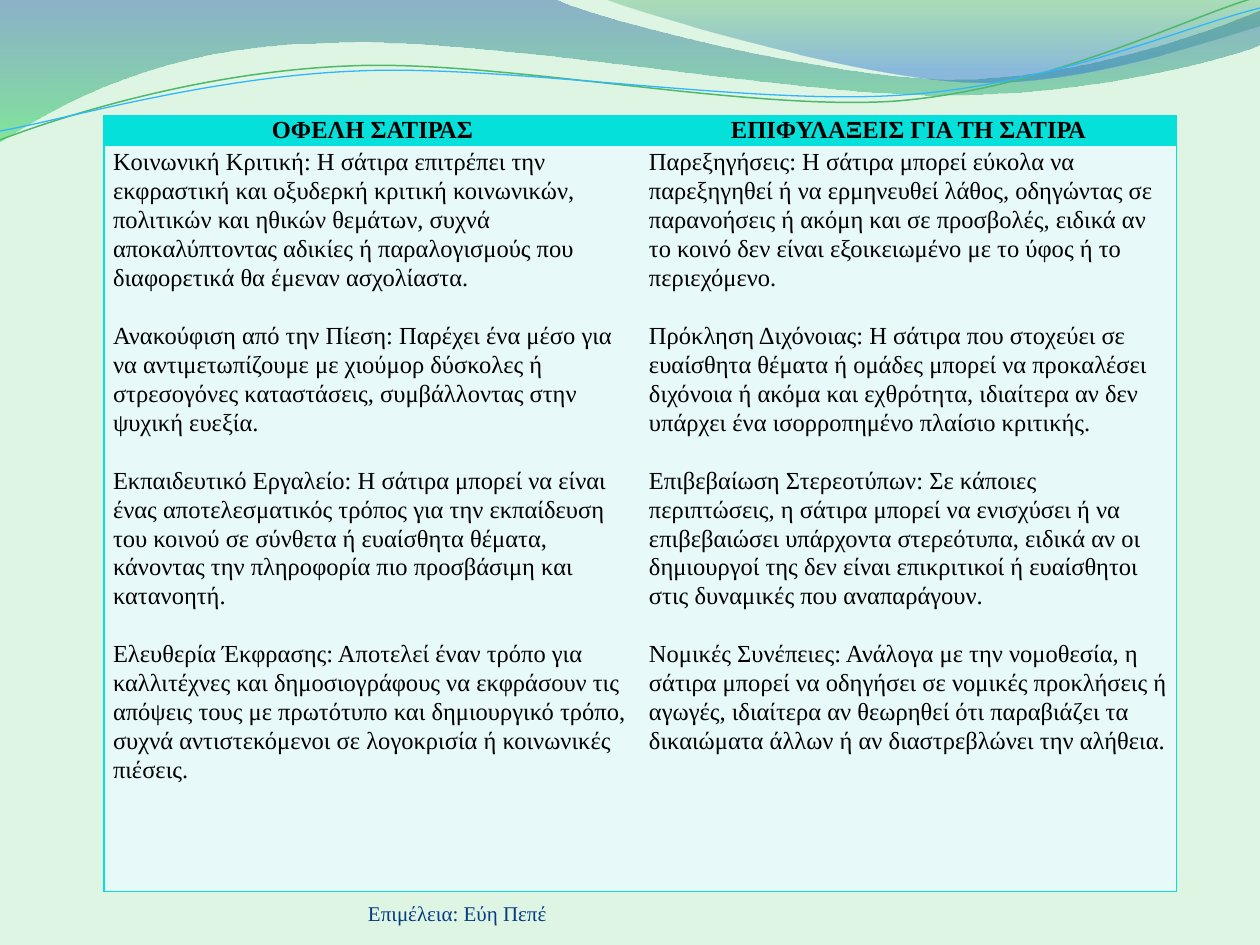
import math
import pptx
import pptx.dml.color
import pptx.enum.text
import pptx.oxml.ns
import pptx.util
import lxml.etree

PX = 914400 / 126
THEME = {
    "background": "DEF5E4", "accent": "05E0DB", "body": "E7F9F8",
    "text": "000000", "credit": "073B81", "font": "Times New Roman",
    "table_size": 14, "credit_size": 12, "line_spacing": 1.07, "paragraph_gap": 16.6,
    "back_wave": [(0, "2960A7", 45), (1, "35DA5E", 55)],
    "front_wave": [(0, "36A752", 30), (0.8, "2472D3", 45)],
    "green_line": ("50B86A", 0.85), "blue_line": ("31B6FD", 0.75),
}
rgb = pptx.dml.color.RGBColor.from_string
qn = pptx.oxml.ns.qn


def px(length):
    return pptx.util.Emu(round(length * PX))


def add_run(paragraph, wording, size, color, bold=False):
    run = paragraph.add_run()
    run.text = wording
    run.font.name = THEME["font"]
    run.font.size = pptx.util.Pt(size)
    run.font.bold = bold
    run.font.color.rgb = rgb(color)


deck = pptx.Presentation()
deck.slide_width, deck.slide_height = px(1260), px(945)
slide = deck.slides.add_slide(deck.slide_layouts[6])
slide.background.fill.solid()
slide.background.fill.fore_color.rgb = rgb(THEME["background"])

waves = [
    ("back_wave", 0, (0, 0), [
        (554, -1), (600, 21, 837, 79, 955, 79), (1075, 79, 1207, 33, 1260, 11),
        (1261, 45), (1239, 55, 1096, 96, 940, 95), (784, 95, 481, 35, 324, 43),
        (163, 45, 58, 105, -1, 142)]),
    ("front_wave", 0, (604, -1), [
        (641, 14, 859, 78, 969, 82), (1079, 87, 1211, 40, 1260, 26), (1260, 0)]),
    ("green_line", -2.7, (0, 140), [
        (60, 117, 199, 72, 349, 66), (498, 59, 747, 112, 898, 101),
        (1050, 88, 1182, 19, 1257, -3)]),
    ("blue_line", -2.7, (0, 131), [
        (59, 121, 207, 77, 357, 71), (506, 64, 752, 106, 903, 95),
        (1053, 85, 1186, 26, 1260, 8)]),
]
PIVOT_X, PIVOT_Y = 629, 73
for style, tilt, start, segments in waves:
    cosine, sine = math.cos(math.radians(-tilt)), math.sin(math.radians(-tilt))
    points = []
    for segment in [start] + segments:
        for x, y in zip(segment[::2], segment[1::2]):
            dx, dy = x - PIVOT_X, y - PIVOT_Y
            points.append((px(PIVOT_X + dx * cosine - dy * sine),
                           px(PIVOT_Y + dx * sine + dy * cosine)))
    filled = style.endswith("wave")
    builder = slide.shapes.build_freeform(*points[0], scale=1.0)
    builder.add_line_segments(points[1:], close=filled)
    wave = builder.convert_to_shape()
    wave.rotation = tilt
    wave.shadow.inherit = False

    steps = iter(list(wave._element.spPr.iter(qn("a:lnTo"))))
    for segment in segments:
        step = next(steps)
        if len(segment) == 6:
            curve = lxml.etree.Element(qn("a:cubicBezTo"))
            step.addprevious(curve)
            for handle in (step, next(steps), next(steps)):
                curve.append(handle[0])
                handle.getparent().remove(handle)

    if filled:
        wave.line.fill.background()
        wave.fill.gradient()
        wave.fill.gradient_angle = 270
        for stop, (position, color, opacity) in zip(wave.fill.gradient_stops, THEME[style]):
            stop.position = position
            stop.color.rgb = rgb(color)
        tints = wave._element.spPr.iter(qn("a:srgbClr"))
        for tint, (position, color, opacity) in zip(tints, THEME[style]):
            lxml.etree.SubElement(tint, qn("a:alpha")).set("val", str(opacity * 1000))
    else:
        color, width = THEME[style]
        wave.fill.background()
        wave.line.color.rgb = rgb(color)
        wave.line.width = pptx.util.Pt(width)

credit = slide.shapes.add_textbox(px(368), px(876), px(462), px(50)).text_frame
credit.word_wrap = True
credit.vertical_anchor = pptx.enum.text.MSO_ANCHOR.BOTTOM
credit.margin_left = credit.margin_right = credit.margin_top = credit.margin_bottom = 0
add_run(credit.paragraphs[0], "Επιμέλεια: Εύη Πεπέ", THEME["credit_size"], THEME["credit"])

benefits = [
    "Κοινωνική Κριτική: Η σάτιρα επιτρέπει την εκφραστική και οξυδερκή κριτική κοινωνικών, πολιτικών και ηθικών θεμάτων, συχνά αποκαλύπτοντας αδικίες ή παραλογισμούς που διαφορετικά θα έμεναν ασχολίαστα.",
    "Ανακούφιση από την Πίεση: Παρέχει ένα μέσο για να αντιμετωπίζουμε με χιούμορ δύσκολες ή στρεσογόνες καταστάσεις, συμβάλλοντας στην ψυχική ευεξία.",
    "Εκπαιδευτικό Εργαλείο: Η σάτιρα μπορεί να είναι ένας αποτελεσματικός τρόπος για την εκπαίδευση του κοινού σε σύνθετα ή ευαίσθητα θέματα, κάνοντας την πληροφορία πιο προσβάσιμη και κατανοητή.",
    "Ελευθερία Έκφρασης: Αποτελεί έναν τρόπο για καλλιτέχνες και δημοσιογράφους να εκφράσουν τις απόψεις τους με πρωτότυπο και δημιουργικό τρόπο, συχνά αντιστεκόμενοι σε λογοκρισία ή κοινωνικές πιέσεις.",
]
reservations = [
    "Παρεξηγήσεις: Η σάτιρα μπορεί εύκολα να παρεξηγηθεί ή να ερμηνευθεί λάθος, οδηγώντας σε παρανοήσεις ή ακόμη και σε προσβολές, ειδικά αν το κοινό δεν είναι εξοικειωμένο με το ύφος ή το περιεχόμενο.",
    "Πρόκληση Διχόνοιας: Η σάτιρα που στοχεύει σε ευαίσθητα θέματα ή ομάδες μπορεί να προκαλέσει διχόνοια ή ακόμα και εχθρότητα, ιδιαίτερα αν δεν υπάρχει ένα ισορροπημένο πλαίσιο κριτικής.",
    "Επιβεβαίωση Στερεοτύπων: Σε κάποιες περιπτώσεις, η σάτιρα μπορεί να ενισχύσει ή να επιβεβαιώσει υπάρχοντα στερεότυπα, ειδικά αν οι δημιουργοί της δεν είναι επικριτικοί ή ευαίσθητοι στις δυναμικές που αναπαράγουν.",
    "Νομικές Συνέπειες: Ανάλογα με την νομοθεσία, η σάτιρα μπορεί να οδηγήσει σε νομικές προκλήσεις ή αγωγές, ιδιαίτερα αν θεωρηθεί ότι παραβιάζει τα δικαιώματα άλλων ή αν διαστρεβλώνει την αλήθεια.",
]
satire_rows = [
    [["ΟΦΕΛΗ ΣΑΤΙΡΑΣ"], ["ΕΠΙΦΥΛΑΞΕΙΣ ΓΙΑ ΤΗ ΣΑΤΙΡΑ"]],
    [benefits, reservations],
]
satire = slide.shapes.add_table(2, 2, px(104), px(115), px(1072), px(774)).table
satire.first_row = satire.horz_banding = False
satire._tbl.tblPr.find(qn("a:tableStyleId")).text = "{2D5ABB26-0587-4C30-8999-92F81FD0307C}"
for column in satire.columns:
    column.width = px(536)
for row, height in zip(satire.rows, (29, 745)):
    row.height = px(height)

for r, row in enumerate(satire_rows):
    header = r == 0
    for c, paragraphs in enumerate(row):
        cell = satire.cell(r, c)
        cell.margin_left, cell.margin_right = px(9), px(8)
        cell.margin_top = cell.margin_bottom = 0
        properties = cell._tc.get_or_add_tcPr()
        borders = [("lnL", 1) if c == 0 else ("lnR", 0.25)]
        if not header:
            borders.append(("lnB", 1))
        for side, width in borders:
            border = lxml.etree.SubElement(properties, qn("a:" + side))
            border.set("w", str(pptx.util.Pt(width)))
            ink = lxml.etree.SubElement(border, qn("a:solidFill"))
            lxml.etree.SubElement(ink, qn("a:srgbClr"), val=THEME["accent"])
        cell.fill.solid()
        cell.fill.fore_color.rgb = rgb(THEME["accent" if header else "body"])
        for i, wording in enumerate(paragraphs):
            frame = cell.text_frame
            paragraph = frame.add_paragraph() if i else frame.paragraphs[0]
            paragraph.line_spacing = THEME["line_spacing"]
            if i:
                paragraph.space_before = pptx.util.Pt(THEME["paragraph_gap"])
            if header:
                paragraph.alignment = pptx.enum.text.PP_ALIGN.CENTER
            add_run(paragraph, wording, THEME["table_size"], THEME["text"], header)

deck.save("out.pptx")
